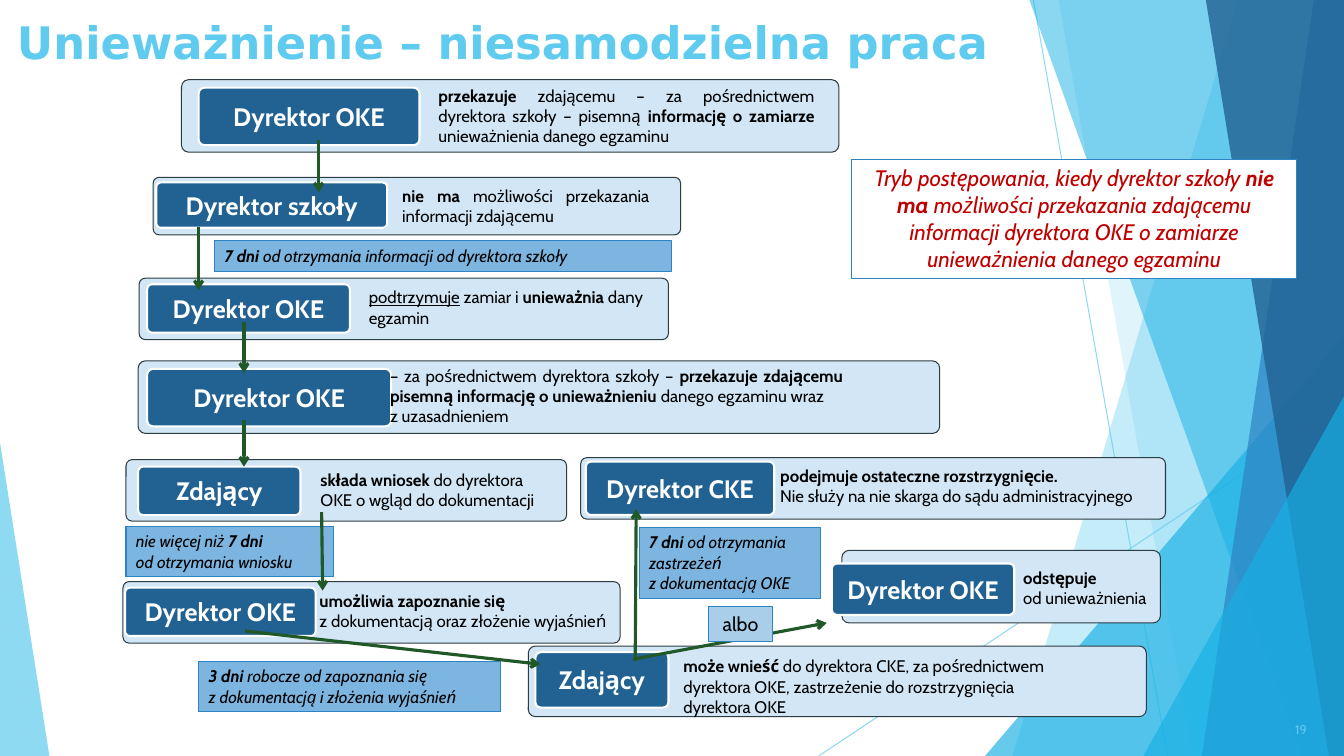
"""Builds a flowchart slide on annulling an exam for work that was not independent."""
from lxml import etree
from pptx import Presentation
from pptx.dml.color import RGBColor
from pptx.enum.shapes import MSO_CONNECTOR, MSO_SHAPE
from pptx.enum.text import MSO_ANCHOR, PP_ALIGN
from pptx.oxml.ns import qn
from pptx.util import Inches, Pt

STRAIGHT = MSO_CONNECTOR.STRAIGHT
RECT, ROUNDED, TRIANGLE = MSO_SHAPE.RECTANGLE, MSO_SHAPE.ROUNDED_RECTANGLE, MSO_SHAPE.ISOSCELES_TRIANGLE
TOP, MIDDLE = MSO_ANCHOR.TOP, MSO_ANCHOR.MIDDLE
LEFT, CENTER, RIGHT, JUSTIFY = PP_ALIGN.LEFT, PP_ALIGN.CENTER, PP_ALIGN.RIGHT, PP_ALIGN.JUSTIFY

SKY = RGBColor(0x5F, 0xCB, 0xEF)
CYAN = RGBColor(0x17, 0xB0, 0xE4)
BLUE = RGBColor(0x2E, 0x83, 0xC3)
NAVY = RGBColor(0x22, 0x62, 0x92)
PALE = RGBColor(0xD3, 0xE6, 0xF5)
NOTE_BLUE = RGBColor(0x7C, 0xB5, 0xE0)
ALBO_BLUE = RGBColor(0xA8, 0xCE, 0xEA)
SLATE = RGBColor(0x2C, 0x3C, 0x43)
GREEN = RGBColor(0x21, 0x58, 0x28)
RED = RGBColor(0xC0, 0x00, 0x00)
WHITE = RGBColor(0xFF, 0xFF, 0xFF)
BLACK = RGBColor(0x00, 0x00, 0x00)
FONT, TITLE_FONT = "Cabin", "DejaVu Sans"
WIDTH, HEIGHT = 13.33, 7.5

TITLE = "Unieważnienie – niesamodzielna praca"
PAGE_NUMBER = "19"

# Each run is (text, style letters); each inner list is a paragraph.
STEPS = [
    ("Dyrektor OKE", (1.8, 0.79, 6.52, 0.72), (1.97, 0.87, 2.19, 0.57), (4.25, 0.8, 3.93, 0.71), JUSTIFY,
     [[("przekazuje", "b"), (" zdającemu – za pośrednictwem dyrektora szkoły – pisemną ", ""),
       ("informację o zamiarze ", "b"), ("unieważnienia danego egzaminu", "")]]),
    ("Dyrektor szkoły", (1.52, 1.76, 5.23, 0.57), (1.55, 1.81, 2.29, 0.45), (3.89, 1.79, 2.65, 0.5), JUSTIFY,
     [[("nie ma ", "b"), ("możliwości przekazania informacji zdającemu", "")]]),
    ("Dyrektor OKE", (1.38, 2.76, 5.25, 0.61), (1.46, 2.82, 2.01, 0.48), (3.56, 2.8, 3, 0.5), LEFT,
     [[("podtrzymuje", "u"), (" zamiar i ", ""), ("unieważnia", "b"), (" dany egzamin", "")]]),
    ("Dyrektor OKE", (1.37, 3.58, 7.95, 0.72), (1.46, 3.66, 2.42, 0.57), (3.77, 3.58, 4.69, 0.71), JUSTIFY,
     [[("– za pośrednictwem dyrektora szkoły – ", ""),
       ("przekazuje zdającemu pisemną informację o unieważnieniu ", "b"), ("danego egzaminu wraz", "")],
      [("z uzasadnieniem", "")]]),
    ("Zdający", (1.25, 4.56, 4.37, 0.61), (1.37, 4.63, 1.61, 0.48), (3.08, 4.61, 2.47, 0.5), LEFT,
     [[("składa wniosek ", "b"), ("do dyrektora OKE o wgląd do dokumentacji", "")]]),
    ("Dyrektor OKE", (1.22, 5.77, 4.93, 0.61), (1.24, 5.83, 1.89, 0.48), (3.07, 5.81, 3.26, 0.5), LEFT,
     [[("umożliwia zapoznanie się", "b")], [("z dokumentacją oraz złożenie wyjaśnień", "")]]),
    ("Dyrektor CKE", (5.76, 4.54, 5.8, 0.61), (5.81, 4.58, 1.87, 0.53), (7.64, 4.57, 4.12, 0.5), LEFT,
     [[("podejmuje ostateczne rozstrzygnięcie.", "b")],
      [("Nie służy na nie skarga do sądu administracyjnego", "")]]),
    ("Dyrektor OKE", (8.35, 5.46, 3.16, 0.72), (8.25, 5.59, 1.81, 0.51), (10.05, 5.58, 1.64, 0.5), LEFT,
     [[("odstępuje", "b")], [("od unieważnienia", "")]]),
    ("Zdający", (5.24, 6.41, 6.13, 0.7), (5.31, 6.47, 1.32, 0.55), (6.68, 6.46, 4.87, 0.71), LEFT,
     [[("może wnieść ", "b"), ("do dyrektora CKE, za pośrednictwem", "")],
      [("dyrektora OKE, zastrzeżenie do rozstrzygnięcia", "")], [("dyrektora OKE", "")]]),
]
DEADLINES = [
    ((2.13, 2.39, 4.53, 0.3), [[("7 dni ", "bi"), ("od otrzymania informacji od dyrektora szkoły", "i")]]),
    ((1.25, 5.22, 2.06, 0.5), [[("nie więcej niż ", "i"), ("7 dni", "bi")], [("od otrzymania wniosku", "i")]]),
    ((1.97, 6.56, 2.99, 0.5), [[("3 dni ", "bi"), ("robocze od zapoznania się", "i")],
                               [("z dokumentacją i złożenia wyjaśnień", "i")]]),
    ((6.34, 5.23, 1.8, 0.71), [[("7 dni ", "bi"), ("od otrzymania", "i")], [("zastrzeżeń", "i")],
                               [("z dokumentacją OKE", "i")]]),
]
PROCEDURE = ((8.45, 1.58, 4.41, 1.18), [[
    ("Tryb postępowania, kiedy dyrektor szkoły ", "i"), ("nie ma ", "bi"),
    ("możliwości przekazania zdającemu informacji dyrektora OKE o zamiarze unieważnienia danego egzaminu", "i")]])
ALBO = ((7.03, 6.02, 0.63, 0.34), [[("albo", "")]])
ARROWS = [
    (3.16, 1.39, 3.16, 1.91), (1.97, 2.25, 1.97, 2.88), (2.42, 3.19, 2.42, 3.7),
    (2.42, 4.17, 2.42, 4.63), (3.19, 5.08, 3.2, 5.86), (2.43, 6.26, 5.36, 6.59),
    (6.28, 6.54, 8.2, 6.18), (6.3, 6.56, 6.31, 5.05),
]

RAYS = [(10.25, 0, 11.58, 7.5), (WIDTH, 4.03, 8.12, 7.5)]
# Bands reach the right edge: (top x, bottom x, colour, opacity).
# Triangles: (box, apex, colour, opacity).
BACKDROP = [
    (12.28, 10.04, SKY, 36),
    (10.5, 11.83, SKY, 20),
    ((9.77, 3.33, 3.56, 4.17), 1, CYAN, 66),
    (10.21, 12.91, CYAN, 50),
    (13.03, 11.92, BLUE, 70),
    (11.96, 13.18, NAVY, 80),
    ((11.34, 3.93, 1.99, 3.57), 1, CYAN, 66),
    ((0, 4.39, 0.49, 3.11), 0, SKY, 70),
]

prs = Presentation()
prs.slide_width, prs.slide_height = Inches(WIDTH), Inches(HEIGHT)
shapes = prs.slides.add_slide(prs.slide_layouts[6]).shapes


def set_opacity(shape, percent):
    for color in shape.element.iter(qn("a:srgbClr")):
        etree.SubElement(color, qn("a:alpha"), val=str(percent * 1000))


def add_line(ends, color, width):
    line = shapes.add_connector(STRAIGHT, *map(Inches, ends))
    line.line.color.rgb = color
    line.line.width = Pt(width)
    etree.SubElement(line.element.spPr, qn("a:effectLst"))
    return line


def add_block(kind, box, fill, outline=None, width=0.75):
    block = shapes.add_shape(kind, *map(Inches, box))
    block.shadow.inherit = False
    block.fill.solid()
    block.fill.fore_color.rgb = fill
    if outline is None:
        block.line.fill.background()
    else:
        block.line.color.rgb = outline
        block.line.width = Pt(width)
    if kind == ROUNDED:
        block.adjustments[0] = 0.1
    return block


def write(shape, paragraphs, size=12, color=BLACK, align=LEFT, anchor=TOP, font=FONT):
    frame = shape.text_frame
    frame.word_wrap = True
    frame.vertical_anchor = anchor
    for index, runs in enumerate(paragraphs):
        paragraph = frame.add_paragraph() if index else frame.paragraphs[0]
        paragraph.alignment = align
        for text, style in runs:
            run = paragraph.add_run()
            run.text = text
            run.font.name, run.font.size = font, Pt(size)
            run.font.color.rgb = color
            run.font.bold, run.font.italic = "b" in style, "i" in style
            run.font.underline = "u" in style


def add_text(box, paragraphs, **format_options):
    write(shapes.add_textbox(*map(Inches, box)), paragraphs, **format_options)


for ray in RAYS:
    set_opacity(add_line(ray, SKY, 0.75), 70)
for place, second, color, opacity in BACKDROP:
    if isinstance(place, tuple):
        facet = add_block(TRIANGLE, place, color)
        facet.adjustments[0] = second
    else:
        outline = shapes.build_freeform(Inches(place), 0)
        corners = [(WIDTH, 0), (WIDTH, HEIGHT), (second, HEIGHT)]
        outline.add_line_segments([(Inches(x), Inches(y)) for x, y in corners])
        facet = outline.convert_to_shape()
        facet.shadow.inherit = False
        facet.fill.solid()
        facet.fill.fore_color.rgb = color
        facet.line.fill.background()
    set_opacity(facet, opacity)

add_text((0.07, 0.08, 13.18, 0.67), [[(TITLE, "b")]], size=32, color=SKY, anchor=MIDDLE, font=TITLE_FONT)
add_text((11.86, 7.11, 1.2, 0.25), [[(PAGE_NUMBER, "")]], size=9, color=SKY, align=RIGHT, anchor=MIDDLE)

for actor, panel, badge, caption, align, action in STEPS:
    add_block(ROUNDED, panel, PALE, SLATE)
    write(add_block(ROUNDED, badge, NAVY, WHITE, 1.5), [[(actor, "b")]],
          size=18, color=WHITE, align=CENTER, anchor=MIDDLE)
    add_text(caption, action, align=align)

for box, deadline in DEADLINES:
    write(add_block(RECT, box, NOTE_BLUE, BLUE), deadline)
write(add_block(RECT, PROCEDURE[0], WHITE, BLUE), PROCEDURE[1], size=16, color=RED, align=CENTER)

for ends in ARROWS:
    arrow = add_line(ends, GREEN, 2.25)
    etree.SubElement(arrow.line._get_or_add_ln(), qn("a:tailEnd"), type="arrow")
write(add_block(RECT, ALBO[0], ALBO_BLUE, BLUE), ALBO[1], size=14, align=CENTER)

prs.save("out.pptx")
